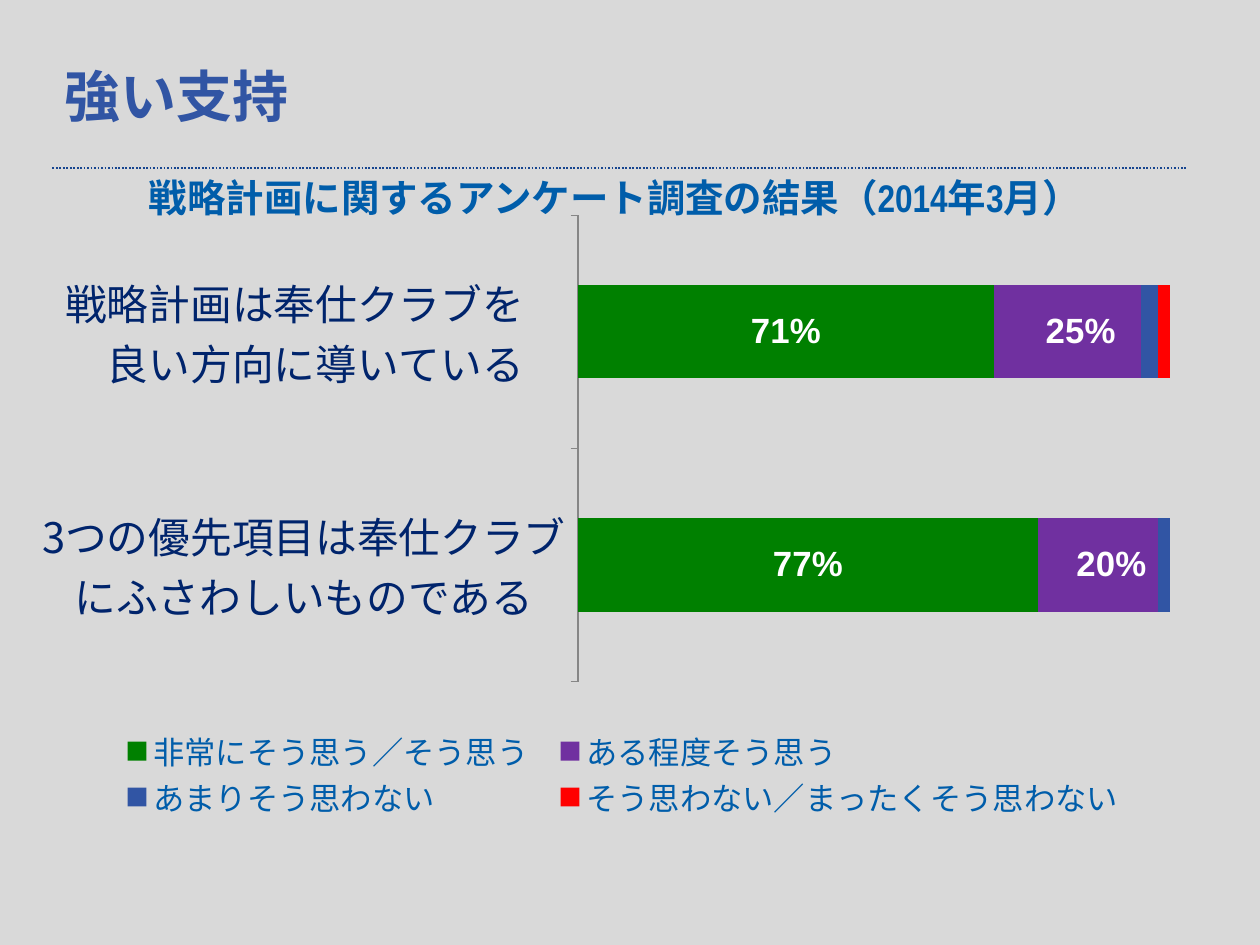
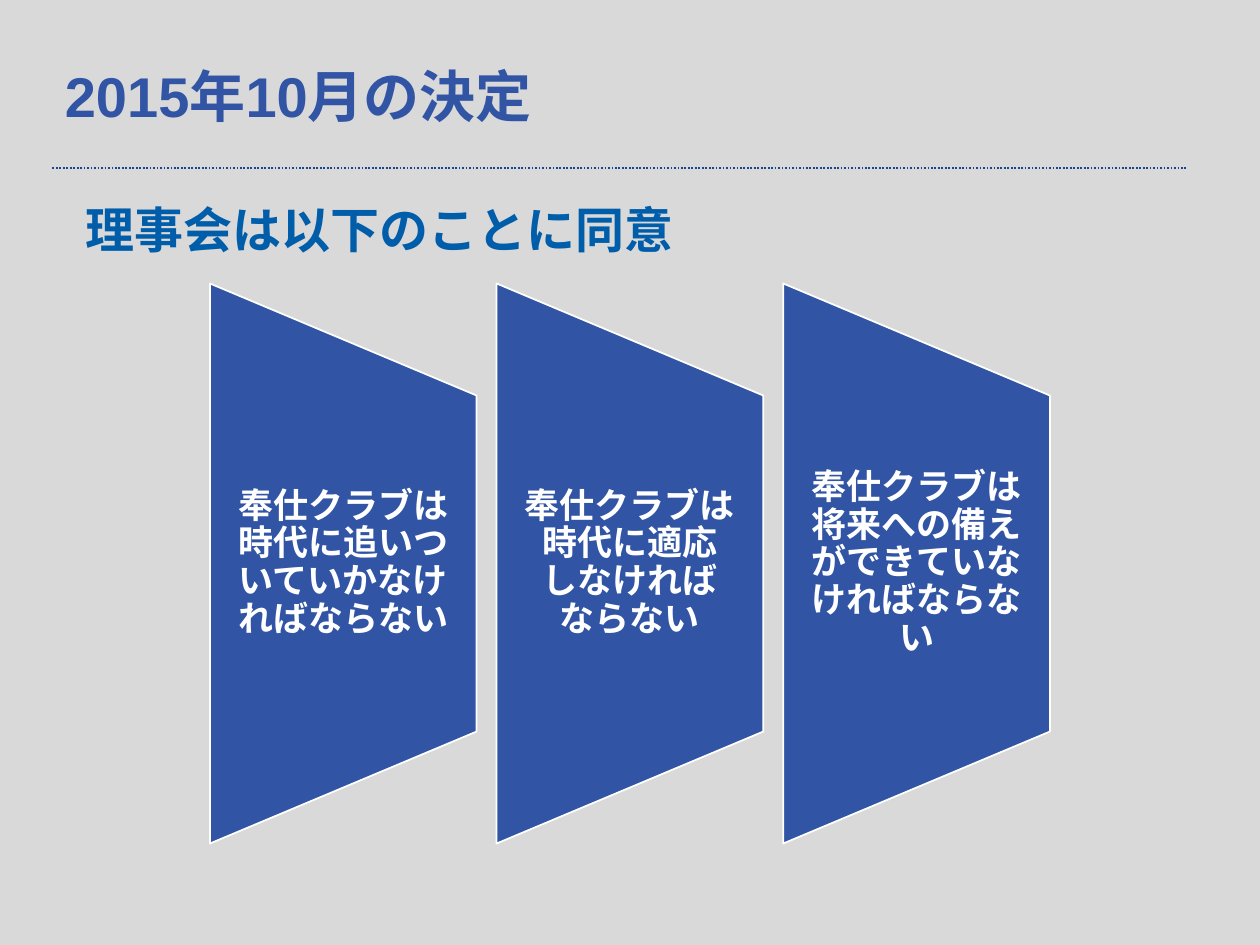
from lxml.etree import SubElement
from pptx import Presentation
from pptx.chart.data import CategoryChartData
from pptx.dml.color import RGBColor
from pptx.enum.chart import XL_CHART_TYPE, XL_LEGEND_POSITION, XL_TICK_LABEL_POSITION, XL_TICK_MARK
from pptx.enum.dml import MSO_LINE
from pptx.enum.shapes import MSO_CONNECTOR, MSO_SHAPE
from pptx.enum.text import MSO_ANCHOR, PP_ALIGN
from pptx.oxml import parse_xml
from pptx.oxml.ns import nsdecls, qn
from pptx.util import Pt

BACKGROUND = RGBColor(0xD9, 0xD9, 0xD9)
BLUE = RGBColor(0x31, 0x55, 0xA4)
RULE_BLUE = RGBColor(0x17, 0x45, 0x8F)
HEADING_BLUE = RGBColor(0x00, 0x5D, 0xAA)
NAVY = RGBColor(0x00, 0x24, 0x6C)
GREEN = RGBColor(0x00, 0x80, 0x00)
PURPLE = RGBColor(0x70, 0x30, 0xA0)
RED = RGBColor(0xFF, 0x00, 0x00)
GREY = RGBColor(0x86, 0x86, 0x86)
WHITE = RGBColor(0xFF, 0xFF, 0xFF)
BLACK = RGBColor(0x00, 0x00, 0x00)
SANS, NARROW = "Arial", "Arial Narrow"


def add_text(slide, box, lines, size, color, anchor=MSO_ANCHOR.TOP,
             align=PP_ALIGN.LEFT, spacing=0.9, insets=(7.2, 3.6)):
    """Add one bold paragraph; each line is a list of (text, font) runs."""
    frame = slide.shapes.add_textbox(*map(Pt, box)).text_frame
    frame.word_wrap = True
    frame.vertical_anchor = anchor
    frame.margin_left = frame.margin_right = Pt(insets[0])
    frame.margin_top = frame.margin_bottom = Pt(insets[1])
    paragraph = frame.paragraphs[0]
    paragraph.alignment = align
    paragraph.line_spacing = spacing
    for number, line in enumerate(lines):
        if number:
            paragraph.add_line_break()
        for text, font_name in line:
            run = paragraph.add_run()
            run.text = text
            run.font.name = font_name
            run.font.size = Pt(size)
            run.font.bold = True
            run.font.color.rgb = color


def set_layout(parent, index, **settings):
    """Give a chart part a manual layout, in fractions of the chart."""
    for old in parent.findall(qn("c:layout")):
        parent.remove(old)
    layout = parse_xml(f"<c:layout {nsdecls('c')}><c:manualLayout/></c:layout>")
    for tag, value in settings.items():
        SubElement(layout[0], qn(f"c:{tag}")).set("val", str(value))
    parent.insert(index, layout)


prs = Presentation()
prs.slide_width, prs.slide_height = Pt(720), Pt(540)

# Shared background, dotted rule and title
titles = [
    [("強い支持", NARROW)],
    [("2015", SANS), ("年", NARROW), ("10月の決定", SANS)],
]
slides = []
for title in titles:
    slide = prs.slides.add_slide(prs.slide_layouts[6])
    slide.background.fill.solid()
    slide.background.fill.fore_color.rgb = BACKGROUND
    rule = slide.shapes.add_connector(MSO_CONNECTOR.STRAIGHT, Pt(30), Pt(96), Pt(678), Pt(96))
    rule.line.color.rgb = RULE_BLUE
    rule.line.width = Pt(1)
    rule.line.dash_style = MSO_LINE.ROUND_DOT
    SubElement(rule._element.spPr, qn("a:effectLst"))
    add_text(slide, (30, 36, 648, 42), [title], 32, BLUE, MSO_ANCHOR.MIDDLE)
    slides.append(slide)
support, decision = slides

# Slide 1: survey results
answers = [
    ("非常にそう思う／そう思う", (0.77, 0.71), GREEN),
    ("ある程度そう思う", (0.20, 0.25), PURPLE),
    ("あまりそう思わない", (0.02, 0.03), BLUE),
    ("そう思わない／まったくそう思わない", (0, 0.02), RED),
]
survey = CategoryChartData(number_format="0%")
survey.categories = [
    "3つの優先項目は奉仕クラブにふさわしいものである",
    "戦略計画は奉仕クラブを　良い方向に導いている",
]
for name, shares, _ in answers:
    survey.add_series(name, shares)
chart = support.shapes.add_chart(
    XL_CHART_TYPE.BAR_STACKED_100, Pt(24), Pt(114), Pt(646.5), Pt(373), survey).chart
chart.has_title = False
chart.font.name, chart.font.size = "Cambria", Pt(10)
chart.font.color.rgb = BLACK
bars = chart.plots[0]
bars.gap_width, bars.overlap, bars.vary_by_categories = 150, 100, False
for series, (_, _, color) in zip(bars.series, answers):
    series.format.fill.solid()
    series.format.fill.fore_color.rgb = color

# Percentages on the two largest answers
agree, partly_agree = bars.series[0], bars.series[1]
labels = agree.data_labels
labels.show_value = True
labels.number_format, labels.number_format_is_linked = "0%", False
label_fonts = [labels.font]
label_fonts += [partly_agree.points[i].data_label.font for i in range(2)]
for font in label_fonts:
    font.name, font.size, font.bold = SANS, Pt(20), True
    font.color.rgb = WHITE
for label in partly_agree._element.iter(qn("c:dLbl")):
    set_layout(label, 1, x=0.012, y=0)

# Axes
shares_axis = chart.value_axis
shares_axis.minimum_scale, shares_axis.maximum_scale = 0, 1
shares_axis.has_major_gridlines = False
shares_axis.visible = False
statements = chart.category_axis
statements.major_tick_mark = XL_TICK_MARK.OUTSIDE
statements.tick_label_position = XL_TICK_LABEL_POSITION.NEXT_TO_AXIS
statements.format.line.color.rgb = GREY
statements.tick_labels.font.name = "Noto Sans CJK JP"
statements.tick_labels.font.size = Pt(24)
statements.tick_labels.font.color.rgb = NAVY

# Legend below the bars
chart.has_legend = True
legend = chart.legend
legend.position = XL_LEGEND_POSITION.TOP
legend.include_in_layout = False
legend.font.name, legend.font.size = NARROW, Pt(18)
legend.font.color.rgb = HEADING_BLUE
set_layout(legend._element, 1, xMode="edge", yMode="edge", x=0.05, y=0.81, w=0.92, h=0.14)
plot_area = chart._chartSpace.chart.plotArea
set_layout(plot_area, 0, layoutTarget="inner", xMode="edge", yMode="edge",
           x=0.47, y=0.024, w=0.527, h=0.715)

add_text(support, (36.5, 96, 629.5, 34),
         [[("戦略計画に関するアンケート調査の結果（2014年3月）", NARROW)]],
         22, HEADING_BLUE, align=PP_ALIGN.CENTER, spacing=1.0)

# Slide 2: what the board agreed
add_text(decision, (42, 114, 630, 54), [[("理事会は以下のことに同意", SANS)]], 28, HEADING_BLUE)
agreements = [
    ["奉仕クラブは", "時代に追いついていかなければならない"],
    ["奉仕クラブは", "時代に適応", "しなければ", "ならない"],
    ["奉仕クラブは", "将来への備えができていなければならない"],
]
PANEL_W, PANEL_H, TEXT_H = 152.4, 320, 192
STEP, CENTER_Y = 163.8, 322
for number, agreement in enumerate(agreements):
    center_x = 360 + (number - 1) * STEP
    panel = decision.shapes.add_shape(
        MSO_SHAPE.FLOWCHART_MANUAL_OPERATION,
        Pt(center_x - PANEL_H / 2), Pt(CENTER_Y - PANEL_W / 2), Pt(PANEL_H), Pt(PANEL_W))
    panel.rotation = 270
    panel.shadow.inherit = False
    panel.fill.solid()
    panel.fill.fore_color.rgb = BLUE
    panel.line.color.rgb = WHITE
    panel.line.width = Pt(1)
    add_text(decision, (center_x - PANEL_W / 2, CENTER_Y - TEXT_H / 2, PANEL_W, TEXT_H),
             [[(line, SANS)] for line in agreement], 20, WHITE,
             MSO_ANCHOR.MIDDLE, PP_ALIGN.CENTER, insets=(10, 0))

prs.save("out.pptx")
